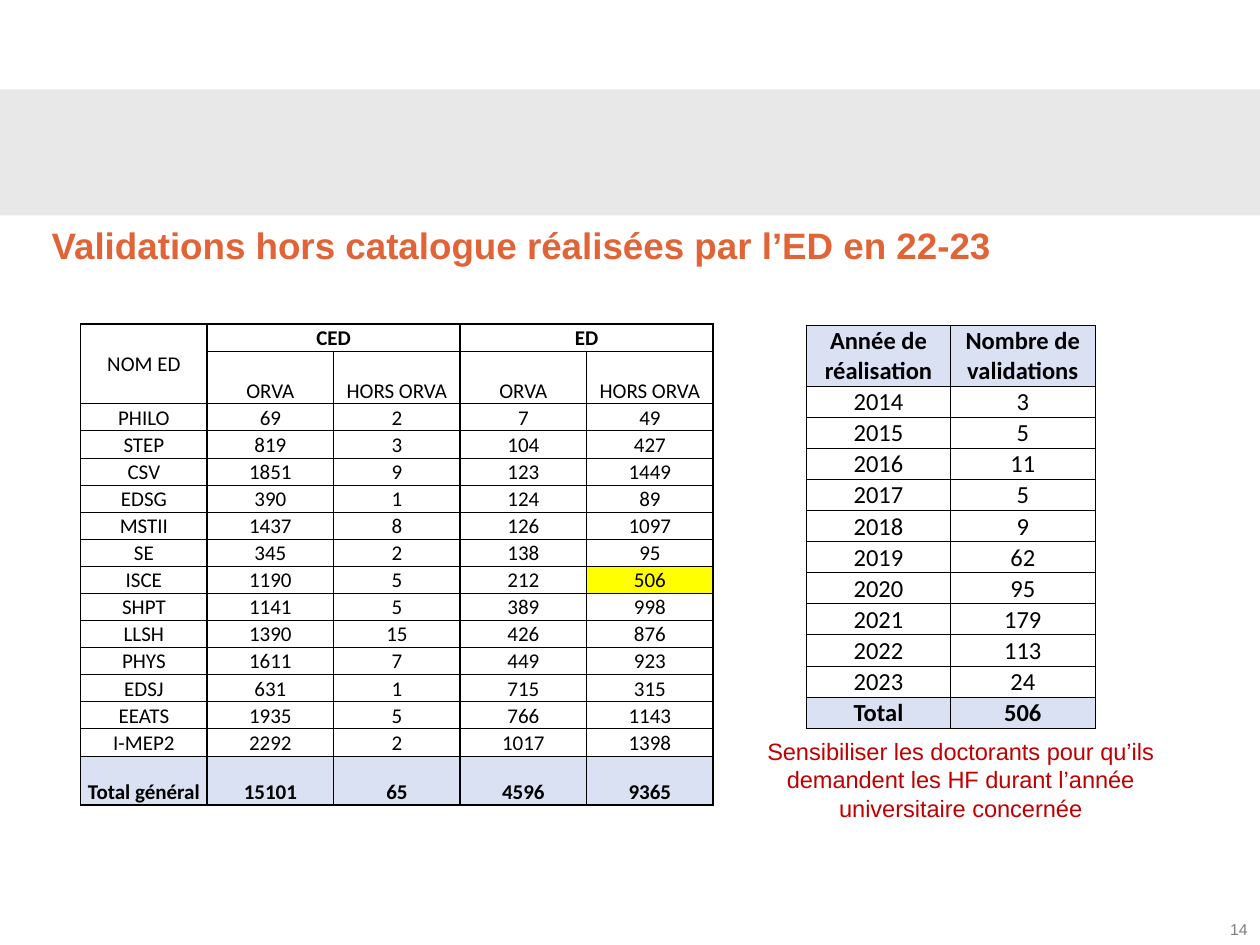
from lxml import etree
from pptx import Presentation
from pptx.dml.color import RGBColor
from pptx.enum import shapes, text
from pptx.oxml import ns
from pptx.util import Inches, Pt

HEADER_FILL = "D9E1F2"


def color(value):
    return RGBColor.from_string(value)


def set_border(cell, side, width):
    """Draw a black border on side L, R, T or B of a cell; call before filling it."""
    ln = etree.SubElement(cell._tc.get_or_add_tcPr(), ns.qn("a:ln" + side), w=str(Pt(width)))
    fill = etree.SubElement(ln, ns.qn("a:solidFill"))
    etree.SubElement(fill, ns.qn("a:srgbClr"), val="000000")


prs = Presentation()
prs.slide_width, prs.slide_height = Inches(10), Inches(7.5)
s = prs.slides.add_slide(prs.slide_layouts[5])

# Header band
band = s.shapes.add_shape(shapes.MSO_SHAPE.RECTANGLE, Inches(-0.01), Inches(0.71), Inches(10.01), Inches(1))
band.shadow.inherit = False
band.fill.solid()
band.fill.fore_color.rgb = color("D9D9D9")
band.line.fill.background()
rgb = band._element.spPr.find(".//" + ns.qn("a:srgbClr"))
etree.SubElement(rgb, ns.qn("a:alpha"), val="59000")

# Title, advice and slide number
title = s.shapes.title
title.left, title.top, title.width, title.height = Inches(0.31), Inches(1.72), Inches(9.38), Inches(0.59)
advice = s.shapes.add_textbox(Inches(5.99), Inches(5.81), Inches(3.27), Inches(0.76))
advice.text_frame.margin_left = advice.text_frame.margin_right = Inches(0.07)
advice.text_frame.margin_top = advice.text_frame.margin_bottom = Inches(0.04)
number = s.shapes.add_textbox(Inches(9.64), Inches(7.25), Inches(0.36), Inches(0.25))

for sp, words, size, rgb, bold, align, wrap in [
    (title, "Validations hors catalogue réalisées par l’ED en 22-23", 21, "E06436", True, "LEFT", True),
    (advice, "Sensibiliser les doctorants pour qu’ils demandent les HF durant l’année "
             "universitaire concernée", 13.5, "C00000", False, "CENTER", True),
    (number, "14", 9, "7F7F7F", False, "RIGHT", False),
]:
    tf = sp.text_frame
    tf.text = words
    tf.word_wrap = wrap
    tf.auto_size = text.MSO_AUTO_SIZE.NONE
    tf.vertical_anchor = text.MSO_ANCHOR.TOP
    p = tf.paragraphs[0]
    p.alignment = text.PP_ALIGN[align]
    p.font.name, p.font.size, p.font.bold = "Arial", Pt(size), bold
    p.font.color.rgb = color(rgb)

# Validations per doctoral school and per year
schools = [
    ("NOM ED", "CED", "", "ED", ""),
    ("", "ORVA", "HORS ORVA", "ORVA", "HORS ORVA"),
    ("PHILO", 69, 2, 7, 49),
    ("STEP", 819, 3, 104, 427),
    ("CSV", 1851, 9, 123, 1449),
    ("EDSG", 390, 1, 124, 89),
    ("MSTII", 1437, 8, 126, 1097),
    ("SE", 345, 2, 138, 95),
    ("ISCE", 1190, 5, 212, 506),
    ("SHPT", 1141, 5, 389, 998),
    ("LLSH", 1390, 15, 426, 876),
    ("PHYS", 1611, 7, 449, 923),
    ("EDSJ", 631, 1, 715, 315),
    ("EEATS", 1935, 5, 766, 1143),
    ("I-MEP2", 2292, 2, 1017, 1398),
    ("Total général", 15101, 65, 4596, 9365),
]
years = [
    ("Année de réalisation", "Nombre de validations"),
    (2014, 3), (2015, 5), (2016, 11), (2017, 5), (2018, 9),
    (2019, 62), (2020, 95), (2021, 179), (2022, 113), (2023, 24),
    ("Total", 506),
]
school_heights = [3.23 / 15] * 15 + [0.39]
school_heights[1] = 0.42
year_heights = [0.48] + [0.24] * 11
school_merges = [(0, 0, 1, 0), (0, 1, 0, 2), (0, 3, 0, 4)]
school_fills = {(8, 4): "FFFF00"} | {(15, c): HEADER_FILL for c in range(5)}
year_fills = {(r, c): HEADER_FILL for r in (0, 11) for c in range(2)}
school_bold = {(0, 1), (0, 3)} | {(15, c) for c in range(5)}

# The last two entries are the column and row edges with a 1 pt border
for rows, left, top, width, heights, size, merges, fills, bold, thick_cols, thick_rows in [
    (schools, 0.64, 2.57, 5.02, school_heights, 12, school_merges, school_fills, school_bold, {0, 1, 3, 5}, {0, 16}),
    (years, 6.4, 2.58, 2.29, year_heights, 14, [], year_fills, set(year_fills), set(), set()),
]:
    table = s.shapes.add_table(len(rows), len(rows[0]), Inches(left), Inches(top),
                               Inches(width), Inches(sum(heights))).table
    table.first_row = table.horz_banding = False
    for row, height in zip(table.rows, heights):
        row.height = Inches(height)
    for r1, c1, r2, c2 in merges:
        table.cell(r1, c1).merge(table.cell(r2, c2))
    for r, values in enumerate(rows):
        for c, value in enumerate(values):
            cell = table.cell(r, c)
            if cell.is_spanned:
                continue
            for side, edge, thick in [("L", c, thick_cols), ("R", c + cell.span_width, thick_cols),
                                      ("T", r, thick_rows), ("B", r + cell.span_height, thick_rows)]:
                set_border(cell, side, 1 if edge in thick else 0.5)
            if (r, c) in fills:
                cell.fill.solid()
                cell.fill.fore_color.rgb = color(fills[r, c])
            else:
                cell.fill.background()
            cell.margin_left = cell.margin_right = cell.margin_top = Inches(0.01)
            cell.margin_bottom = 0
            cell.vertical_anchor = text.MSO_ANCHOR.MIDDLE if cell.span_height > 1 else text.MSO_ANCHOR.BOTTOM
            cell.text = str(value)
            p = cell.text_frame.paragraphs[0]
            p.alignment = text.PP_ALIGN.CENTER
            p.font.name, p.font.size, p.font.bold = "Calibri", Pt(size), (r, c) in bold
            p.font.color.rgb = color("000000")

prs.save("out.pptx")
